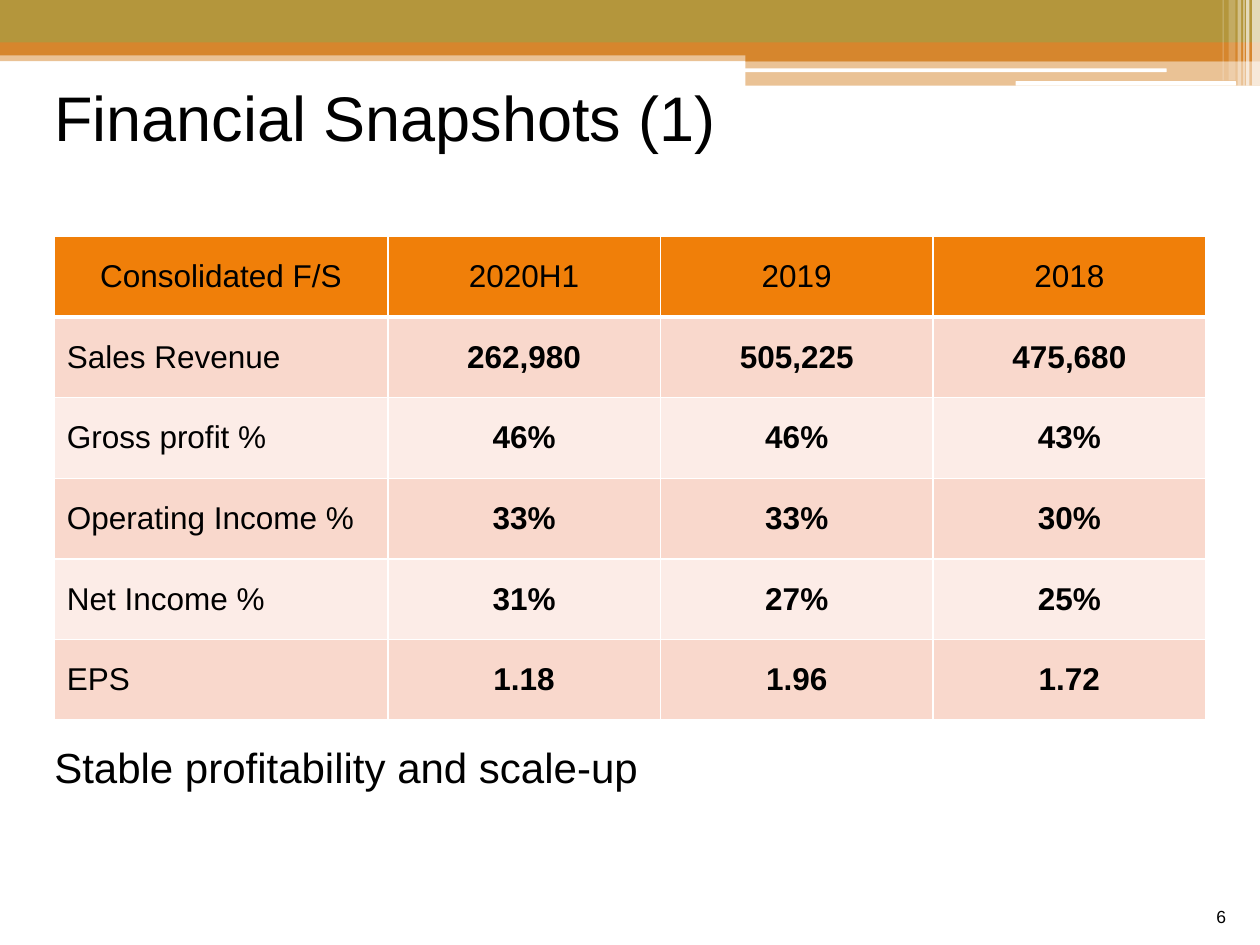
"""Build the financial snapshots slide with its banner and table."""
from pptx import Presentation
from pptx.dml.color import RGBColor
from pptx.enum.shapes import MSO_SHAPE as Shape
from pptx.enum.text import MSO_ANCHOR as Anchor, PP_ALIGN as Align
from pptx.oxml.ns import qn
from pptx.util import Pt
from lxml.etree import SubElement

FONT = "Arial"
BLACK, WHITE = "000000", "FFFFFF"
OLIVE, ORANGE = "B4963C", "D6862D"
HEADER, BANDS = "F07F09", ("F9D8CC", "FCECE7")
LEFT, WIDTH = 31, 658

BANNER = [
    (0, 28.8, 720, 6.2, ORANGE, 50),
    (0, 0, 720, 24.5, OLIVE, 100),
    (0, 24.2, 720, 7.4, ORANGE, 100),
    (426, 28.3, 294, 7, ORANGE, 100),
    (426, 35.2, 294, 13.7, ORANGE, 50),
]
PILLS = [(425.5, 39.1, 241.2, 2.16), (580.3, 46.4, 126, 2.6)]
STRIPES = [
    (715.5, 4.5, 49, 65),
    (712, 2, 49, 65),
    (710.5, 0.7, 49, 60),
    (707.2, 2, 49, 40),
    (702, 4, 46, 20),
    (698.6, 0.7, 46, 30),
]
TEXTS = [
    ("Financial Snapshots (1)", (LEFT, 44.8, WIDTH, 72), dict(size=36)),
    ("Stable profitability and scale-up", (LEFT, 422.6, WIDTH, 57.6),
     dict(size=24, spacing=1.05)),
    ("6", (675.4, 517.6, 25.2, 12.2), dict(size=10, align=Align.RIGHT)),
]
ROWS = [
    ("Consolidated F/S", "2020H1", "2019", "2018"),
    ("Sales Revenue", "262,980", "505,225", "475,680"),
    ("Gross profit %", "46%", "46%", "43%"),
    ("Operating Income %", "33%", "33%", "30%"),
    ("Net Income %", "31%", "27%", "25%"),
    ("EPS", "1.18", "1.96", "1.72"),
]
COLS = (190.6, 155.8, 155.8, 155.8)
TABLE_TOP, ROW_H = 135, 46.1


def rgb(value):
    return RGBColor.from_string(value)


def add_block(s, kind, box, color, opacity=100):
    sp = s.shapes.add_shape(kind, *map(Pt, box))
    sp.shadow.inherit = False
    sp.fill.solid()
    sp.fill.fore_color.rgb = rgb(color)
    sp.line.fill.background()
    if opacity < 100:
        clr = sp.fill._xPr.find(".//" + qn("a:srgbClr"))
        SubElement(clr, qn("a:alpha"), val=str(opacity * 1000))
    return sp


def write(tf, text, size=18, bold=False, align=Align.LEFT, spacing=None):
    p = tf.paragraphs[0]
    p.alignment = align
    if spacing:
        p.line_spacing = spacing
    r = p.add_run()
    r.text = text
    r.font.name, r.font.size, r.font.bold = FONT, Pt(size), bold
    r.font.color.rgb = rgb(BLACK)


def add_text(s, text, box, **fmt):
    tf = s.shapes.add_textbox(*map(Pt, box)).text_frame
    tf.word_wrap = True
    tf.margin_left = tf.margin_top = tf.margin_right = tf.margin_bottom = 0
    write(tf, text, **fmt)


def add_borders(cell, widths):
    tcPr = cell._tc.get_or_add_tcPr()
    for i, (side, width) in enumerate(widths.items()):
        ln = tcPr.makeelement(qn("a:ln" + side), {"w": str(Pt(width))})
        fill = SubElement(ln, qn("a:solidFill"))
        SubElement(fill, qn("a:srgbClr"), val=WHITE)
        tcPr.insert(i, ln)


def add_table(s):
    box = (LEFT, TABLE_TOP, sum(COLS), ROW_H * len(ROWS))
    table = s.shapes.add_table(len(ROWS), len(COLS), *map(Pt, box)).table
    for col, width in zip(table.columns, COLS):
        col.width = Pt(width)
    for i, row in enumerate(ROWS):
        table.rows[i].height = Pt(ROW_H)
        for j, text in enumerate(row):
            cell = table.cell(i, j)
            cell.vertical_anchor = Anchor.MIDDLE
            cell.fill.solid()
            cell.fill.fore_color.rgb = rgb(BANDS[(i - 1) % 2] if i else HEADER)
            add_borders(cell, {"L": 1, "R": 1, "T": 3 if i == 1 else 1,
                               "B": 1 if i else 3})
            write(cell.text_frame, text, bold=i > 0 and j > 0,
                  align=Align.LEFT if i and not j else Align.CENTER)


def main():
    prs = Presentation()
    prs.slide_width, prs.slide_height = Pt(720), Pt(540)
    s = prs.slides.add_slide(prs.slide_layouts[6])
    for *box, color, opacity in BANNER:
        add_block(s, Shape.RECTANGLE, box, color, opacity)
    for box in PILLS:
        add_block(s, Shape.ROUNDED_RECTANGLE, box, WHITE)
    for x, width, height, opacity in STRIPES:
        add_block(s, Shape.RECTANGLE, (x, 0, width, height), WHITE, opacity)
    add_table(s)
    for text, box, fmt in TEXTS:
        add_text(s, text, box, **fmt)
    prs.save("out.pptx")


if __name__ == "__main__":
    main()
